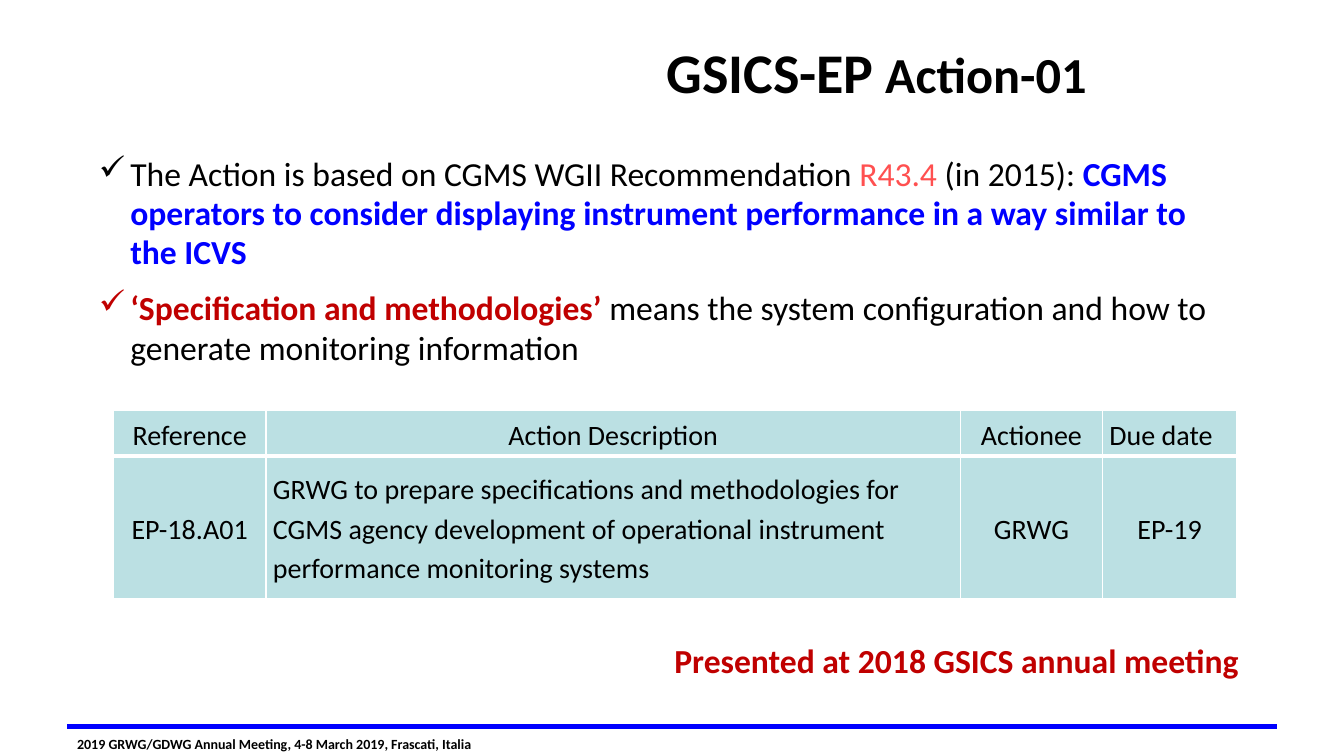
from lxml import etree
from pptx import Presentation
from pptx import util as u
from pptx.dml.color import RGBColor
from pptx.enum import shapes, text
from pptx.oxml.ns import qn

BLACK = RGBColor(0x00, 0x00, 0x00)
WHITE = RGBColor(0xFF, 0xFF, 0xFF)
BLUE = RGBColor(0x00, 0x00, 0xFF)
CORAL = RGBColor(0xFF, 0x50, 0x50)
RED = RGBColor(0xC0, 0x00, 0x00)
TEAL = RGBColor(0xBB, 0xE0, 0xE3)
LEFT, CENTER, RIGHT = text.PP_ALIGN.LEFT, text.PP_ALIGN.CENTER, text.PP_ALIGN.RIGHT


def assign(obj, values):
    for name, value in values.items():
        setattr(obj, name, value)


class Deck:
    font = "Calibri"

    def __init__(self, width, height):
        self.prs = Presentation()
        assign(self.prs, {"slide_width": u.Pt(width), "slide_height": u.Pt(height)})
        self.s = self.prs.slides.add_slide(self.prs.slide_layouts[5])

    def runs(self, p, parts, size, fmt=None):
        assign(p, fmt or {})
        for content, style in parts:
            r = p.add_run()
            r.text = content
            font = {"name": self.font, "size": u.Pt(size), "bold": False} | style
            r.font.color.rgb = font.pop("color", BLACK)
            assign(r.font, font)

    def title(self, box, parts, size):
        sp = self.s.shapes.title
        assign(sp, dict(zip(("left", "top", "width", "height"), map(u.Pt, box))))
        tf = sp.text_frame
        assign(tf, {"word_wrap": True, "vertical_anchor": text.MSO_ANCHOR.MIDDLE})
        self.runs(tf.paragraphs[0], parts, size, {"alignment": CENTER})

    def textbox(self, box, paragraphs, size, fmt=None, bullet=None, indent=22.5):
        tf = self.s.shapes.add_textbox(*map(u.Pt, box)).text_frame
        tf.word_wrap = True
        for i, parts in enumerate(paragraphs):
            p = tf.add_paragraph() if i else tf.paragraphs[0]
            self.runs(p, parts, size, fmt)
            if bullet:
                pPr = p._p.get_or_add_pPr()
                pPr.set("marL", str(u.Pt(indent)))
                pPr.set("indent", str(-u.Pt(indent)))
                etree.SubElement(pPr, qn("a:buChar")).set("char", bullet)

    def line(self, x1, y1, x2, y2, color, width):
        c = self.s.shapes.add_connector(
            shapes.MSO_CONNECTOR.STRAIGHT, *map(u.Pt, (x1, y1, x2, y2)))
        c.line.color.rgb = color
        c.line.width = u.Pt(width)
        etree.SubElement(c._element.spPr, qn("a:effectLst"))

    def border(self, cell, side, width):
        ln = etree.Element(qn("a:ln" + side), w=str(u.Pt(width)))
        fill = etree.SubElement(ln, qn("a:solidFill"))
        etree.SubElement(fill, qn("a:srgbClr"), val=str(WHITE))
        return ln

    def table(self, x, y, widths, heights, rows, aligns, size):
        t = self.s.shapes.add_table(
            len(rows), len(widths), *map(u.Pt, (x, y, sum(widths), sum(heights)))).table
        assign(t, {"first_row": False, "horz_banding": False})
        for col, w in zip(t.columns, widths):
            col.width = u.Pt(w)
        for row, h in zip(t.rows, heights):
            row.height = u.Pt(h)
        for i, row in enumerate(rows):
            for j, content in enumerate(row):
                cell = t.cell(i, j)
                assign(cell, {"margin_left": u.Pt(5), "margin_right": u.Pt(5),
                              "margin_top": 0, "margin_bottom": 0,
                              "vertical_anchor": text.MSO_ANCHOR.MIDDLE})
                cell.fill.solid()
                cell.fill.fore_color.rgb = TEAL
                fmt = {"alignment": aligns[i][j], "line_spacing": 1.15}
                if i and aligns[i][j] == LEFT:
                    fmt["space_after"] = u.Pt(10)
                self.runs(cell.text_frame.paragraphs[0], [(content, {})], size, fmt)
                tcPr = cell._tc.get_or_add_tcPr()
                sides = {"L": 1, "R": 1, "T": 3 if i else 1, "B": 1 if i else 3}
                for k, (side, width) in enumerate(sides.items()):
                    tcPr.insert(k, self.border(cell, side, width))


def main():
    d = Deck(960, 540)
    bold = {"bold": True}
    d.textbox((48, 522, 592.5, 19.5),
              [[("2019 GRWG/GDWG Annual Meeting, 4-8 March 2019, Frascati, Italia", bold)]], 10)
    d.line(48, 519, 912, 519, BLUE, 3)
    d.textbox((63.5, 106.5, 821, 160.5), [
        [("The Action is based on CGMS WGII Recommendation ", {}),
         ("R43.4", {"color": CORAL}),
         (" (in 2015): ", {}),
         ("CGMS operators to consider displaying instrument performance "
          "in a way similar to the ICVS", {"color": BLUE, "bold": True})],
        [("‘Specification and methodologies’", {"color": RED, "bold": True}),
         (" means the system configuration and how to generate monitoring information", {})],
    ], 24, {"line_spacing": u.Pt(28), "space_before": u.Pt(12)}, "✓")
    d.title((340, 21.5, 572.5, 59),
            [("GSICS-EP", bold), (" Action-01", {"bold": True, "size": u.Pt(36)})], 40)
    d.table(81, 293, (109, 496, 101.5, 96), (32.5, 102), [
        ("Reference", "Action Description", "Actionee", "Due date"),
        ("EP-18.A01", "GRWG to prepare specifications and methodologies for CGMS agency "
         "development of operational instrument performance monitoring systems",
         "GRWG", "EP-19"),
    ], [(CENTER, CENTER, CENTER, LEFT), (CENTER, LEFT, CENTER, CENTER)], 20)
    d.textbox((325.5, 453.5, 566.5, 36),
              [[("Presented at 2018 GSICS annual meeting", {"color": RED, "bold": True})]],
              24, {"alignment": RIGHT})
    d.prs.save("out.pptx")


if __name__ == "__main__":
    main()
